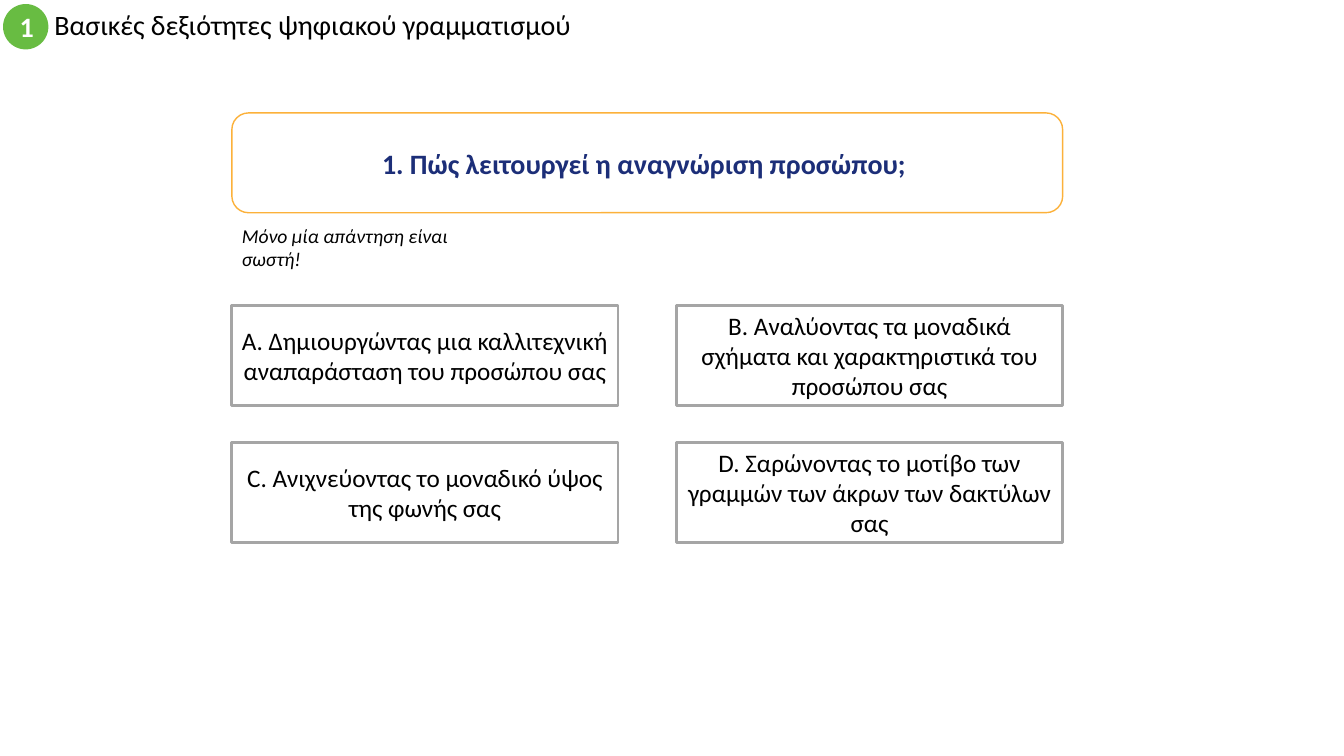
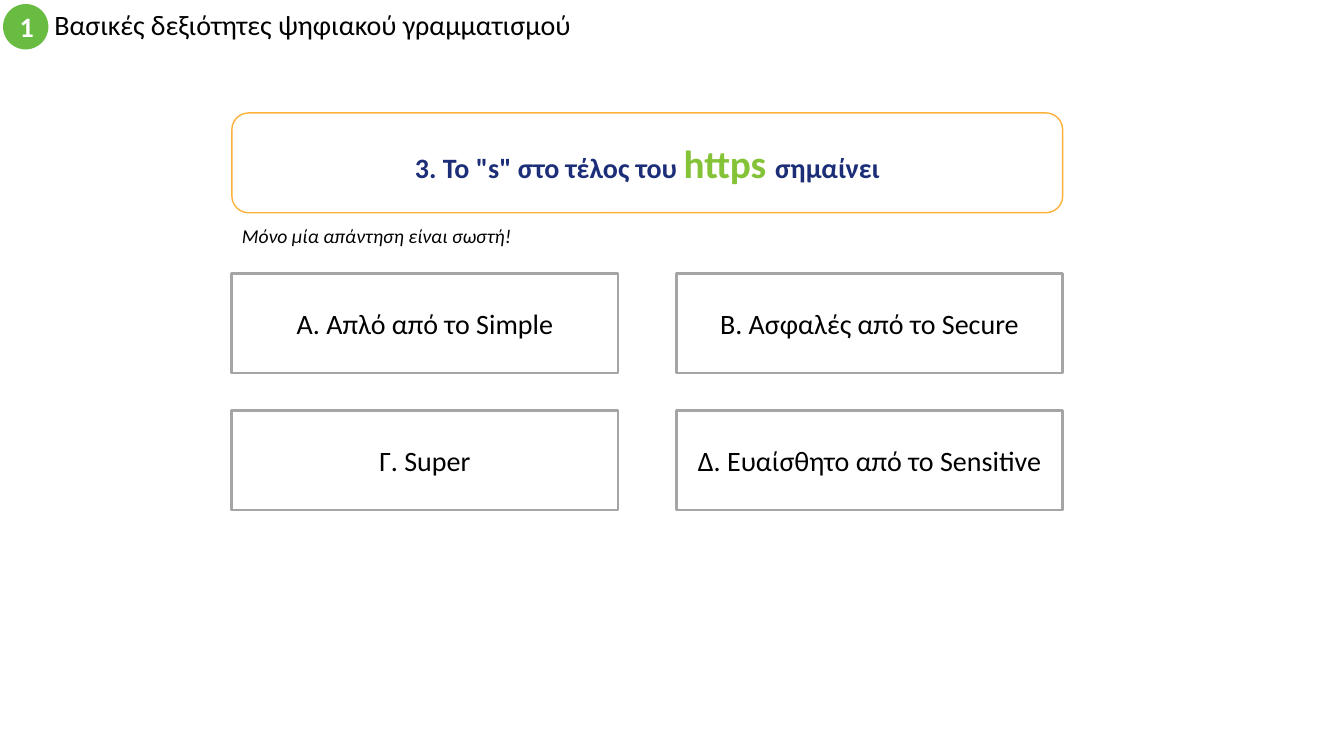
from dataclasses import dataclass

from pptx import Presentation
from pptx.dml.color import RGBColor
from pptx.enum.shapes import MSO_SHAPE as Shape
from pptx.enum.text import MSO_ANCHOR as Anchor, MSO_AUTO_SIZE as Fit, PP_ALIGN as Align
from pptx.util import Inches, Pt

FONT = "Calibri"
COLORS = {
    "black": "000000",
    "white": "FFFFFF",
    "green": "68BC42",
    "lime": "84C337",
    "navy": "1C2E78",
    "amber": "FCB13A",
    "gray": "A5A5A5",
}
TOPIC = "Βασικές δεξιότητες ψηφιακού γραμματισμού"
HINT = "Μόνο μία απάντηση είναι σωστή!"

# Answer grid, in inches
LEFT, WIDTH, HEIGHT = 2.3, 3.83, 0.99
STEP_X, STEP_Y = 4.41, 1.36


@dataclass
class Run:
    text: str
    size: int = 20
    color: str = "black"
    bold: bool = False
    italic: bool = False


@dataclass
class Box:
    left: float
    top: float
    width: float
    height: float

    def lengths(self) -> list:
        return [Inches(n) for n in (self.left, self.top, self.width, self.height)]


@dataclass
class Quiz:
    question: list[Run]
    answers: list[str]
    size: int
    top: float
    hint_width: float


QUIZZES = [
    Quiz(
        [Run("1. Πώς λειτουργεί η αναγνώριση προσώπου; ", color="navy", bold=True)],
        [
            "A. Δημιουργώντας μια καλλιτεχνική αναπαράσταση του προσώπου σας",
            "B. Αναλύοντας τα μοναδικά σχήματα και χαρακτηριστικά του προσώπου σας",
            "C. Ανιχνεύοντας το μοναδικό ύψος της φωνής σας",
            "D. Σαρώνοντας το μοτίβο των γραμμών των άκρων των δακτύλων σας",
        ],
        size=18, top=3.03, hint_width=2.36,
    ),
    Quiz(
        [
            Run('3. Το "s" στο τέλος του ', color="navy", bold=True),
            Run("https ", 28, "lime", bold=True),
            Run("σημαίνει", color="navy", bold=True),
        ],
        [
            "A. Απλό από το Simple",
            "B. Ασφαλές από το Secure",
            "Γ. Super",
            "Δ. Ευαίσθητο από το Sensitive",
        ],
        size=20, top=2.71, hint_width=3.83,
    ),
]


def color(name: str) -> RGBColor:
    return RGBColor.from_string(COLORS[name])


def write(shape, runs: list[Run], align=Align.CENTER, anchor=Anchor.MIDDLE):
    """Fill a shape with one paragraph and return the paragraph."""
    frame = shape.text_frame
    frame.word_wrap = True
    frame.auto_size = Fit.NONE
    frame.vertical_anchor = anchor
    para = frame.paragraphs[0]
    para.alignment = align
    for item in runs:
        run = para.add_run()
        run.text = item.text
        font = run.font
        font.name, font.size = FONT, Pt(item.size)
        font.bold, font.italic = item.bold, item.italic
        font.color.rgb = color(item.color)
    return para


def panel(slide, kind, box: Box, runs: list[Run], fill="white", line="", weight=1):
    shape = slide.shapes.add_shape(kind, *box.lengths())
    shape.shadow.inherit = False
    shape.fill.solid()
    shape.fill.fore_color.rgb = color(fill)
    if line:
        shape.line.color.rgb = color(line)
        shape.line.width = Pt(weight)
    else:
        shape.line.fill.background()
    write(shape, runs)


def header(slide) -> None:
    title = slide.shapes.title
    title.left, title.top, title.width, title.height = Box(0.44, 0.04, 8, 0.45).lengths()
    write(title, [Run(TOPIC)], Align.LEFT).line_spacing = 0.9
    badge = Run("1", color="white", bold=True)
    panel(slide, Shape.OVAL, Box(0.03, 0.04, 0.45, 0.45), [badge], "green")


def build(slide, quiz: Quiz) -> None:
    header(slide)

    # Question and hint
    panel(slide, Shape.ROUNDED_RECTANGLE, Box(LEFT, 1.12, STEP_X + WIDTH, HEIGHT),
          quiz.question, line="amber")
    hint = slide.shapes.add_textbox(*Box(LEFT, 2.17, quiz.hint_width, 0.34).lengths())
    write(hint, [Run(HINT, 14, italic=True)], Align.LEFT, Anchor.TOP)

    # Answers in two columns
    for i, text in enumerate(quiz.answers):
        row, col = divmod(i, 2)
        box = Box(LEFT + col * STEP_X, quiz.top + row * STEP_Y, WIDTH, HEIGHT)
        panel(slide, Shape.RECTANGLE, box, [Run(text, quiz.size)], line="gray", weight=2)


def main() -> None:
    deck = Presentation()
    deck.slide_width, deck.slide_height = Inches(13.33), Inches(7.5)
    layout = deck.slide_layouts.get_by_name("Title Only")
    for quiz in QUIZZES:
        build(deck.slides.add_slide(layout), quiz)
    deck.save("out.pptx")


if __name__ == "__main__":
    main()
